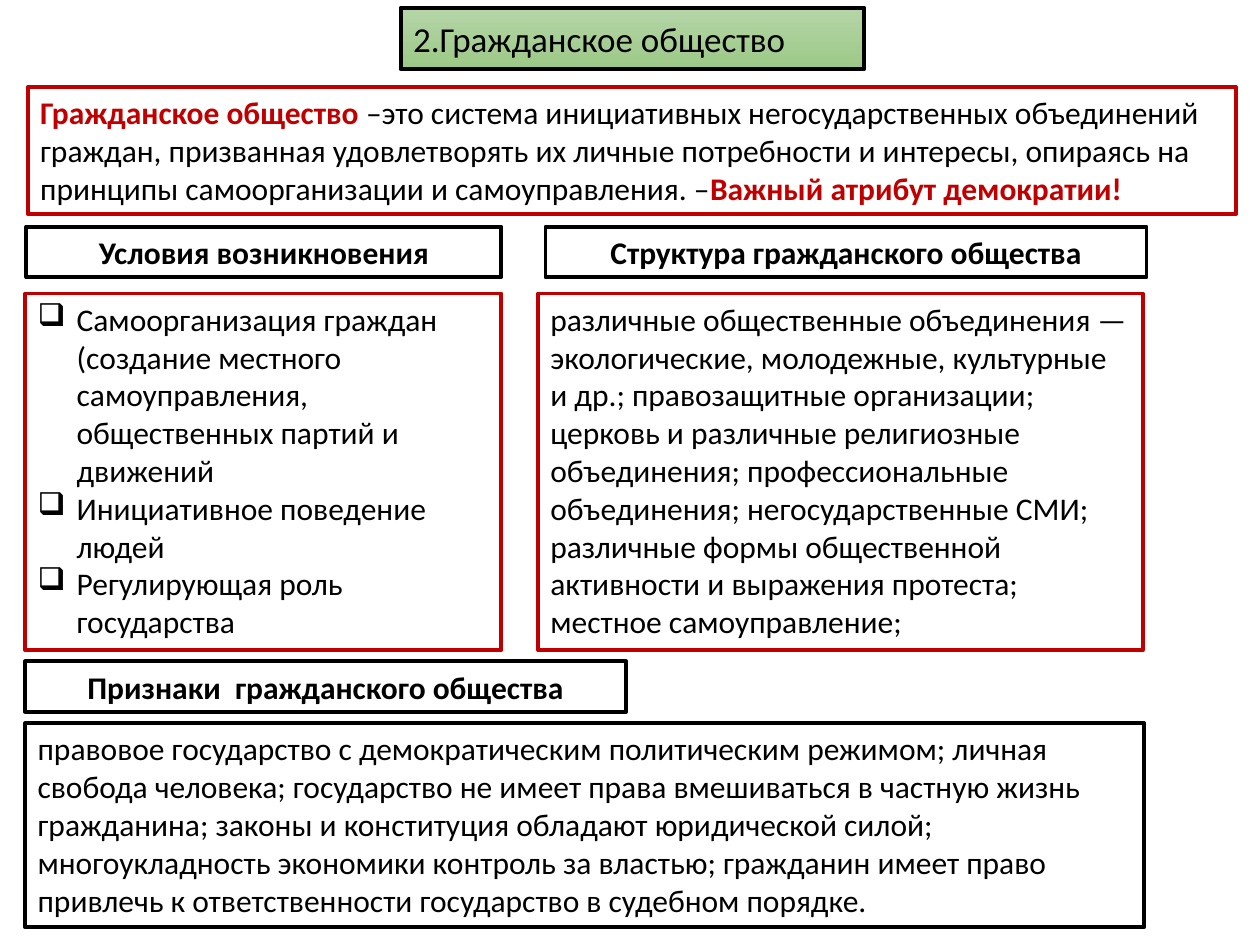
from dataclasses import dataclass

from lxml import etree
from pptx import Presentation
from pptx.dml.color import RGBColor
from pptx.enum.shapes import MSO_SHAPE
from pptx.enum.text import MSO_ANCHOR, MSO_AUTO_SIZE, PP_ALIGN
from pptx.oxml.ns import qn
from pptx.util import Inches, Pt

BLACK = RGBColor(0x00, 0x00, 0x00)
WHITE = RGBColor(0xFF, 0xFF, 0xFF)
RED = RGBColor(0xC0, 0x00, 0x00)
GREEN_TOP = RGBColor(0xB5, 0xD5, 0xA7)
GREEN_BOTTOM = RGBColor(0x9C, 0xC9, 0x87)
RECTANGLE = MSO_SHAPE.RECTANGLE
LEFT, CENTER = PP_ALIGN.LEFT, PP_ALIGN.CENTER
TOP, MIDDLE = MSO_ANCHOR.TOP, MSO_ANCHOR.MIDDLE
FIXED, GROW = MSO_AUTO_SIZE.NONE, MSO_AUTO_SIZE.SHAPE_TO_FIT_TEXT
BULLET_INDENT = Inches(0.31)
LEFT_EDGE = 0.2
HEADING_TOP, HEADING_HEIGHT = 1.8, 0.4
COLUMN_TOP, COLUMN_HEIGHT = 2.33, 2.83


@dataclass(frozen=True)
class Phrase:
    text: str
    color: RGBColor = BLACK
    bold: bool = False


@dataclass(frozen=True)
class Panel:
    left: float
    top: float
    width: float
    height: float
    paragraphs: list[list[Phrase]]
    border: RGBColor = BLACK
    align: PP_ALIGN = LEFT
    anchor: MSO_ANCHOR = TOP
    auto_size: MSO_AUTO_SIZE = GROW
    size: int = 18
    bulleted: bool = False
    gradient: bool = False


def heading(left: float, top: float, width: float, text: str) -> Panel:
    return Panel(left, top, width, HEADING_HEIGHT,
                 [[Phrase(text, bold=True)]], align=CENTER)


def add_bullet(paragraph) -> None:
    properties = paragraph._p.get_or_add_pPr()
    properties.set("marL", str(BULLET_INDENT))
    properties.set("indent", str(-BULLET_INDENT))
    etree.SubElement(properties, qn("a:buChar")).set("char", "❑")


def paint(shape, panel: Panel) -> None:
    shape.shadow.inherit = False
    if panel.gradient:
        shape.fill.gradient()
        shape.fill.gradient_angle = 270
        for stop, color in zip(shape.fill.gradient_stops, (GREEN_TOP, GREEN_BOTTOM)):
            stop.color.rgb = color
    else:
        shape.fill.solid()
        shape.fill.fore_color.rgb = WHITE
    shape.line.color.rgb = panel.border
    shape.line.width = Pt(2.25)


def draw_panel(slide, panel: Panel) -> None:
    shape = slide.shapes.add_shape(
        RECTANGLE, Inches(panel.left), Inches(panel.top),
        Inches(panel.width), Inches(panel.height))
    paint(shape, panel)
    frame = shape.text_frame
    frame_format = {"word_wrap": True, "auto_size": panel.auto_size,
                    "vertical_anchor": panel.anchor}
    for name, value in frame_format.items():
        setattr(frame, name, value)
    for index, phrases in enumerate(panel.paragraphs):
        paragraph = frame.add_paragraph() if index else frame.paragraphs[0]
        paragraph.alignment = panel.align
        if panel.bulleted:
            add_bullet(paragraph)
        for phrase in phrases:
            run = paragraph.add_run()
            run.text = phrase.text
            font_format = {"name": "Calibri", "size": Pt(panel.size), "bold": phrase.bold}
            for name, value in font_format.items():
                setattr(run.font, name, value)
            run.font.color.rgb = phrase.color


CONDITIONS = [
    "Самоорганизация граждан (создание местного самоуправления, "
    "общественных партий и движений",
    "Инициативное поведение людей",
    "Регулирующая роль государства",
]
DEFINITION = [
    Phrase("Гражданское общество ", RED, True),
    Phrase("–это система инициативных негосударственных объединений граждан, "
           "призванная удовлетворять их личные потребности и интересы, опираясь на "
           "принципы самоорганизации и самоуправления. –"),
    Phrase("Важный атрибут демократии!", RED, True),
]
STRUCTURE = (
    "различные общественные объединения — экологические, молодежные, культурные "
    "и др.; правозащитные организации; церковь и различные религиозные объединения; "
    "профессиональные объединения; негосударственные СМИ; различные формы "
    "общественной активности и выражения протеста; местное самоуправление;"
)
FEATURES = (
    "правовое государство с демократическим политическим режимом; личная свобода "
    "человека; государство не имеет права вмешиваться в частную жизнь гражданина; "
    "законы и конституция обладают юридической силой; многоукладность экономики "
    "контроль за властью; гражданин имеет право привлечь к ответственности "
    "государство в судебном порядке."
)
PANELS = [
    Panel(LEFT_EDGE, COLUMN_TOP, 3.78, COLUMN_HEIGHT,
          [[Phrase(condition)] for condition in CONDITIONS], border=RED, bulleted=True),
    heading(0.21, HEADING_TOP, 3.77, "Условия возникновения"),
    Panel(0.22, 0.69, 9.59, 1.01, [DEFINITION], border=RED),
    Panel(3.18, 0.06, 3.68, 0.49, [[Phrase("2.Гражданское общество")]],
          anchor=MIDDLE, auto_size=FIXED, size=20, gradient=True),
    Panel(4.27, COLUMN_TOP, 4.8, COLUMN_HEIGHT, [[Phrase(STRUCTURE)]], border=RED),
    heading(4.33, HEADING_TOP, 4.77, "Структура гражданского общества"),
    heading(LEFT_EDGE, 5.25, 4.77, "Признаки  гражданского общества"),
    Panel(LEFT_EDGE, 5.74, 8.88, 1.62, [[Phrase(FEATURES)]]),
]


def main() -> None:
    presentation = Presentation()
    presentation.slide_width = Inches(10)
    presentation.slide_height = Inches(7.5)
    slide = presentation.slides.add_slide(presentation.slide_layouts[6])
    for panel in PANELS:
        draw_panel(slide, panel)
    presentation.save("out.pptx")


if __name__ == "__main__":
    main()
